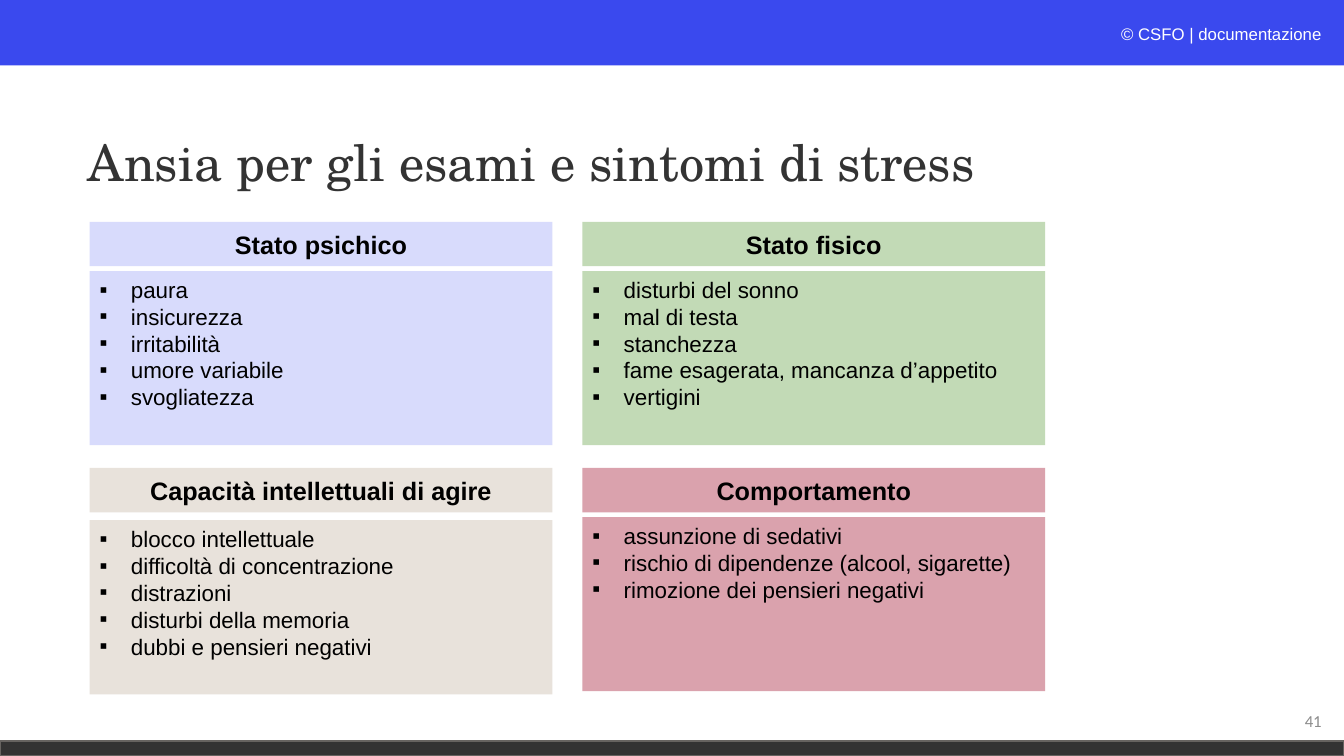
from lxml import etree
from pptx import Presentation
from pptx import util as u
from pptx.dml.color import RGBColor
from pptx.enum import shapes, text
from pptx.oxml import ns

BLUE = RGBColor(0x3A, 0x49, 0xEE)
DARK = RGBColor(0x33, 0x33, 0x33)
EDGE = RGBColor(0x66, 0x63, 0x60)
GREY = RGBColor(0x8C, 0x8C, 0x8C)
WHITE = RGBColor(0xFF, 0xFF, 0xFF)
BLACK = RGBColor(0x00, 0x00, 0x00)
LILAC = RGBColor(0xD8, 0xDB, 0xFC)
GREEN = RGBColor(0xC2, 0xDA, 0xB6)
SAND = RGBColor(0xE8, 0xE2, 0xDB)
ROSE = RGBColor(0xDA, 0xA2, 0xAD)

SLIDE_WIDTH, SLIDE_HEIGHT = u.Cm(33.87), u.Cm(19.05)
CARD_WIDTH, HEADING_HEIGHT, LIST_HEIGHT = u.Cm(11.66), u.Cm(1.12), u.Cm(4.39)
CARDS_LEFT, CARDS_TOP = u.Cm(2.26), u.Cm(5.59)
COLUMN_STEP, ROW_STEP = u.Cm(12.42), u.Cm(6.2)
LIST_INDENT = u.Cm(0.79)

CARDS = [
    ("Stato psichico", LILAC, u.Cm(0.12),
     ["paura", "insicurezza", "irritabilità", "umore variabile", "svogliatezza"]),
    ("Stato fisico", GREEN, u.Cm(0.12),
     ["disturbi del sonno", "mal di testa", "stanchezza",
      "fame esagerata, mancanza d’appetito", "vertigini"]),
    ("Capacità intellettuali di agire", SAND, u.Cm(0.2),
     ["blocco intellettuale", "difficoltà di concentrazione", "distrazioni",
      "disturbi della memoria", "dubbi e pensieri negativi"]),
    ("Comportamento", ROSE, u.Cm(0.12),
     ["assunzione di sedativi", "rischio di dipendenze (alcool, sigarette)",
      "rimozione dei pensieri negativi"]),
]


def set_font(paragraph, name, size, color, bold=False):
    font = paragraph.font
    font.name, font.size, font.bold = name, u.Pt(size), bold
    font.color.rgb = color


def add_rectangle(slide, left, top, width, height, color):
    shape = slide.shapes.add_shape(shapes.MSO_SHAPE.RECTANGLE, left, top, width, height)
    shape.shadow.inherit = False
    shape.fill.solid()
    shape.fill.fore_color.rgb = color
    shape.line.fill.background()
    return shape


def add_label(slide, left, top, width, height, wording, font_name, color):
    frame = slide.shapes.add_textbox(left, top, width, height).text_frame
    frame.word_wrap = True
    frame.vertical_anchor = text.MSO_ANCHOR.MIDDLE
    paragraph = frame.paragraphs[0]
    paragraph.text = wording
    paragraph.alignment = text.PP_ALIGN.RIGHT
    set_font(paragraph, font_name, 12, color)


def add_bullet(paragraph):
    properties = paragraph._p.get_or_add_pPr()
    properties.set("marL", str(LIST_INDENT))
    properties.set("indent", str(-LIST_INDENT))
    etree.SubElement(properties, ns.qn("a:buFont"), typeface="Arial")
    etree.SubElement(properties, ns.qn("a:buChar"), char="▪")


def add_header(slide, left, top, width, height):
    add_rectangle(slide, left, top, width, height, BLUE)
    label_width = u.Cm(11.66)
    add_label(slide, left + width - label_width - u.Cm(0.31), top + u.Cm(0.48),
              label_width, u.Cm(0.76), "© CSFO | documentazione", "Arial", WHITE)


def add_footer(slide, left, top, width, height):
    bar = add_rectangle(slide, left, top, width, height, DARK)
    bar.line.color.rgb = EDGE
    bar.line.width = u.Pt(1)
    number_width = u.Cm(7.62)
    add_label(slide, left + width - number_width - u.Cm(0.31), top - u.Cm(1.02),
              number_width, u.Cm(1.02), "41", "Calibri", GREY)


def add_title(slide, left, top, width, height):
    title = slide.shapes.title
    title.left, title.top, title.width, title.height = left, top, width, height
    title.text_frame.vertical_anchor = text.MSO_ANCHOR.MIDDLE
    paragraph = title.text_frame.paragraphs[0]
    paragraph.text = "Ansia per gli esami e sintomi di stress"
    paragraph.alignment = text.PP_ALIGN.LEFT
    paragraph.line_spacing = 0.9
    set_font(paragraph, "TeX Gyre Schola", 36, DARK)


def add_card(slide, left, top, width, heading, color, gap, items):
    header = add_rectangle(slide, left, top, width, HEADING_HEIGHT, color)
    header.text_frame.vertical_anchor = text.MSO_ANCHOR.MIDDLE
    paragraph = header.text_frame.paragraphs[0]
    paragraph.text = heading
    paragraph.alignment = text.PP_ALIGN.CENTER
    set_font(paragraph, "Arial", 18, BLACK, bold=True)

    body = add_rectangle(slide, left, top + HEADING_HEIGHT + gap, width, LIST_HEIGHT, color)
    frame = body.text_frame
    frame.vertical_anchor = text.MSO_ANCHOR.TOP
    frame.text = "\n".join(items)
    for paragraph in frame.paragraphs:
        paragraph.alignment = text.PP_ALIGN.LEFT
        add_bullet(paragraph)
        set_font(paragraph, "Arial", 16, BLACK)


def main():
    presentation = Presentation()
    presentation.slide_width, presentation.slide_height = SLIDE_WIDTH, SLIDE_HEIGHT
    slide = presentation.slides.add_slide(presentation.slide_layouts.get_by_name("Title Only"))
    add_header(slide, 0, 0, SLIDE_WIDTH, u.Cm(1.65))
    footer_height = u.Cm(0.38)
    add_footer(slide, 0, SLIDE_HEIGHT - footer_height, SLIDE_WIDTH, footer_height)
    add_title(slide, u.Cm(1.96), u.Cm(2.31), u.Cm(29.21), u.Cm(3.68))
    for index, card in enumerate(CARDS):
        row, column = divmod(index, 2)
        add_card(slide, CARDS_LEFT + column * COLUMN_STEP, CARDS_TOP + row * ROW_STEP,
                 CARD_WIDTH, *card)
    presentation.save("out.pptx")


if __name__ == "__main__":
    main()
